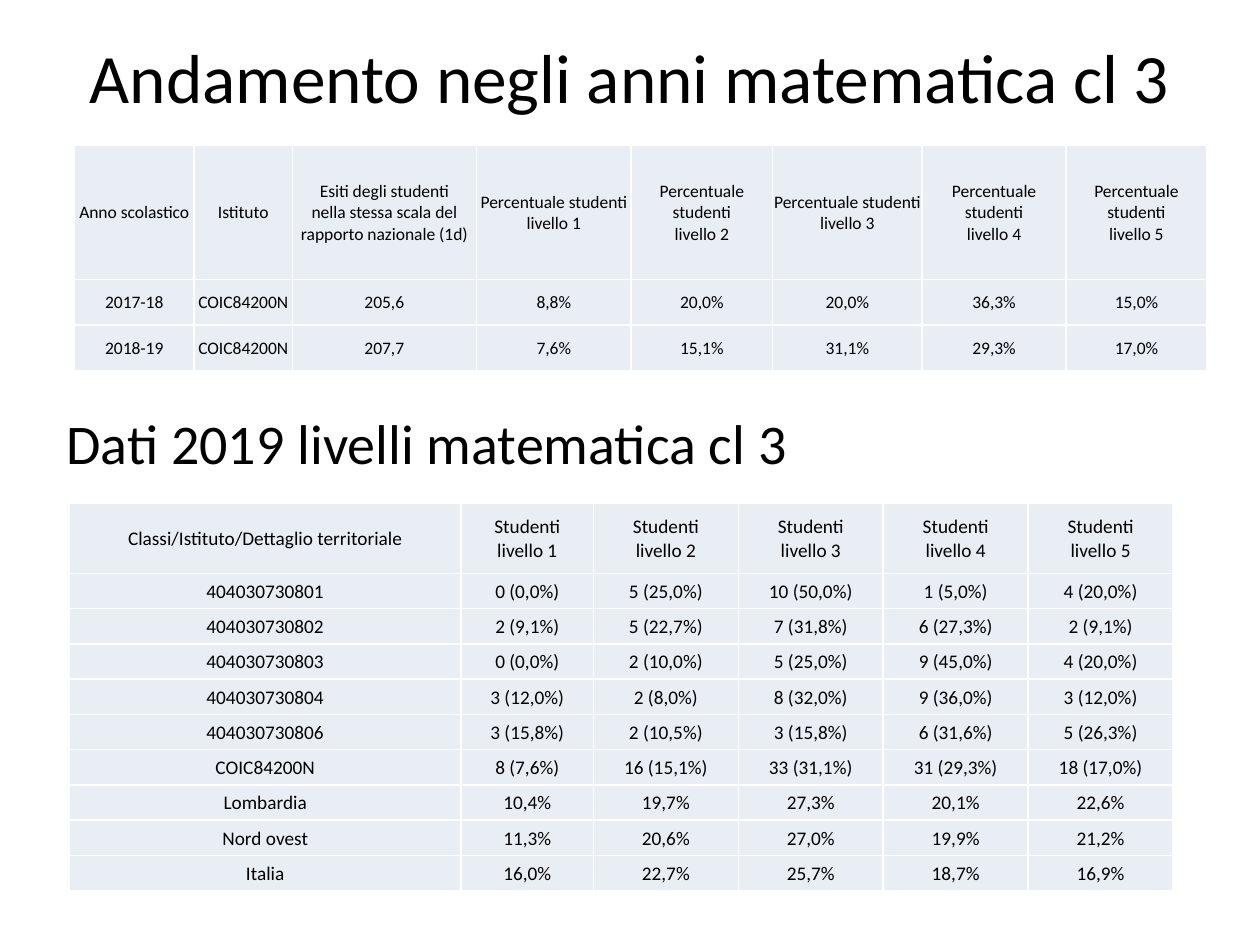
from dataclasses import dataclass

from lxml import etree
from pptx import Presentation
from pptx import util as u
from pptx.dml.color import RGBColor
from pptx.enum import text
from pptx.oxml import ns

FONT = "Calibri"
COLOURS = {"ink": "000000", "cell": "E9EDF4", "border": "FFFFFF"}
LEVELS = range(1, 6)


@dataclass
class Heading:
    wording: str
    left: float
    top: float
    size: float
    align: text.PP_ALIGN


@dataclass
class Grid:
    left: float
    top: float
    widths: list[float]
    heights: list[float]
    size: float
    rows: list[list[str]]


HEADINGS = [
    Heading("Andamento negli anni matematica cl 3", 0.5, 0.3, 39.6,
            text.PP_ALIGN.CENTER),
    Heading("Dati 2019 livelli matematica cl 3", 0.43, 3.2, 32,
            text.PP_ALIGN.LEFT),
]

# Results by school year
YEARS = Grid(
    0.59, 1.15,
    [0.95, 0.78, 1.46, 1.23, 1.12, 1.19, 1.14, 1.12],
    [1.07, 0.36, 0.36],
    10,
    [
        ["Anno scolastico", "Istituto",
         "Esiti degli studenti\nnella stessa scala del\nrapporto nazionale (1d)",
         *(f"Percentuale studenti\nlivello {level}" for level in LEVELS)],
        ["2017-18", "COIC84200N", "205,6",
         "8,8%", "20,0%", "20,0%", "36,3%", "15,0%"],
        ["2018-19", "COIC84200N", "207,7",
         "7,6%", "15,1%", "31,1%", "29,3%", "17,0%"],
    ],
)

# Levels in 2019 by class and territory
CLASSES = Grid(
    0.55, 3.99,
    [3.11, 1.05] + [1.15] * 4,
    [0.56] + [0.28] * 9,
    11,
    [
        ["Classi/Istituto/Dettaglio territoriale",
         *(f"Studenti\nlivello {level}" for level in LEVELS)],
        ["404030730801", "0 (0,0%)", "5 (25,0%)", "10 (50,0%)", "1 (5,0%)", "4 (20,0%)"],
        ["404030730802", "2 (9,1%)", "5 (22,7%)", "7 (31,8%)", "6 (27,3%)", "2 (9,1%)"],
        ["404030730803", "0 (0,0%)", "2 (10,0%)", "5 (25,0%)", "9 (45,0%)", "4 (20,0%)"],
        ["404030730804", "3 (12,0%)", "2 (8,0%)", "8 (32,0%)", "9 (36,0%)", "3 (12,0%)"],
        ["404030730806", "3 (15,8%)", "2 (10,5%)", "3 (15,8%)", "6 (31,6%)", "5 (26,3%)"],
        ["COIC84200N", "8 (7,6%)", "16 (15,1%)", "33 (31,1%)", "31 (29,3%)", "18 (17,0%)"],
        ["Lombardia", "10,4%", "19,7%", "27,3%", "20,1%", "22,6%"],
        ["Nord ovest", "11,3%", "20,6%", "27,0%", "19,9%", "21,2%"],
        ["Italia", "16,0%", "22,7%", "25,7%", "18,7%", "16,9%"],
    ],
)


def write(frame, wording: str, size: float, align: text.PP_ALIGN) -> None:
    """Fill a text frame with one paragraph, a run for each line."""
    para = frame.paragraphs[0]
    para.alignment = align
    for number, line in enumerate(wording.split("\n")):
        if number:
            para.add_line_break()
        span = para.add_run()
        span.text = line
        span.font.name = FONT
        span.font.size = u.Pt(size)
        span.font.color.rgb = RGBColor.from_string(COLOURS["ink"])


def add_borders(cell) -> None:
    """Draw a thin line on the four sides of a cell."""
    properties = cell._tc.get_or_add_tcPr()
    for position, side in enumerate(("lnL", "lnR", "lnT", "lnB")):
        line = etree.Element(ns.qn(f"a:{side}"), w=str(u.Pt(1)))
        fill = etree.SubElement(line, ns.qn("a:solidFill"))
        etree.SubElement(fill, ns.qn("a:srgbClr"), val=COLOURS["border"])
        properties.insert(position, line)


def draw_heading(page, heading: Heading) -> None:
    box = page.shapes.add_textbox(u.Inches(heading.left), u.Inches(heading.top),
                                  u.Inches(9), u.Inches(0.61))
    frame = box.text_frame
    frame.word_wrap = True
    frame.vertical_anchor = text.MSO_ANCHOR.MIDDLE
    write(frame, heading.wording, heading.size, heading.align)


def draw_grid(page, grid: Grid) -> None:
    table = page.shapes.add_table(
        len(grid.heights), len(grid.widths),
        u.Inches(grid.left), u.Inches(grid.top),
        u.Inches(sum(grid.widths)), u.Inches(sum(grid.heights))).table
    table.first_row = table.horz_banding = False
    for column, width in zip(table.columns, grid.widths):
        column.width = u.Inches(width)
    for row, height, wordings in zip(table.rows, grid.heights, grid.rows):
        row.height = u.Inches(height)
        for cell, wording in zip(row.cells, wordings):
            cell.margin_left = cell.margin_right = cell.margin_top = u.Inches(0.01)
            cell.margin_bottom = u.Inches(0)
            cell.vertical_anchor = text.MSO_ANCHOR.MIDDLE
            cell.fill.solid()
            cell.fill.fore_color.rgb = RGBColor.from_string(COLOURS["cell"])
            add_borders(cell)
            write(cell.text_frame, wording, grid.size, text.PP_ALIGN.CENTER)


def main() -> None:
    deck = Presentation()
    deck.slide_width, deck.slide_height = u.Inches(10), u.Inches(7.5)
    page = deck.slides.add_slide(deck.slide_layouts[6])
    for heading, grid in zip(HEADINGS, (YEARS, CLASSES)):
        draw_heading(page, heading)
        draw_grid(page, grid)
    deck.save("out.pptx")


if __name__ == "__main__":
    main()
